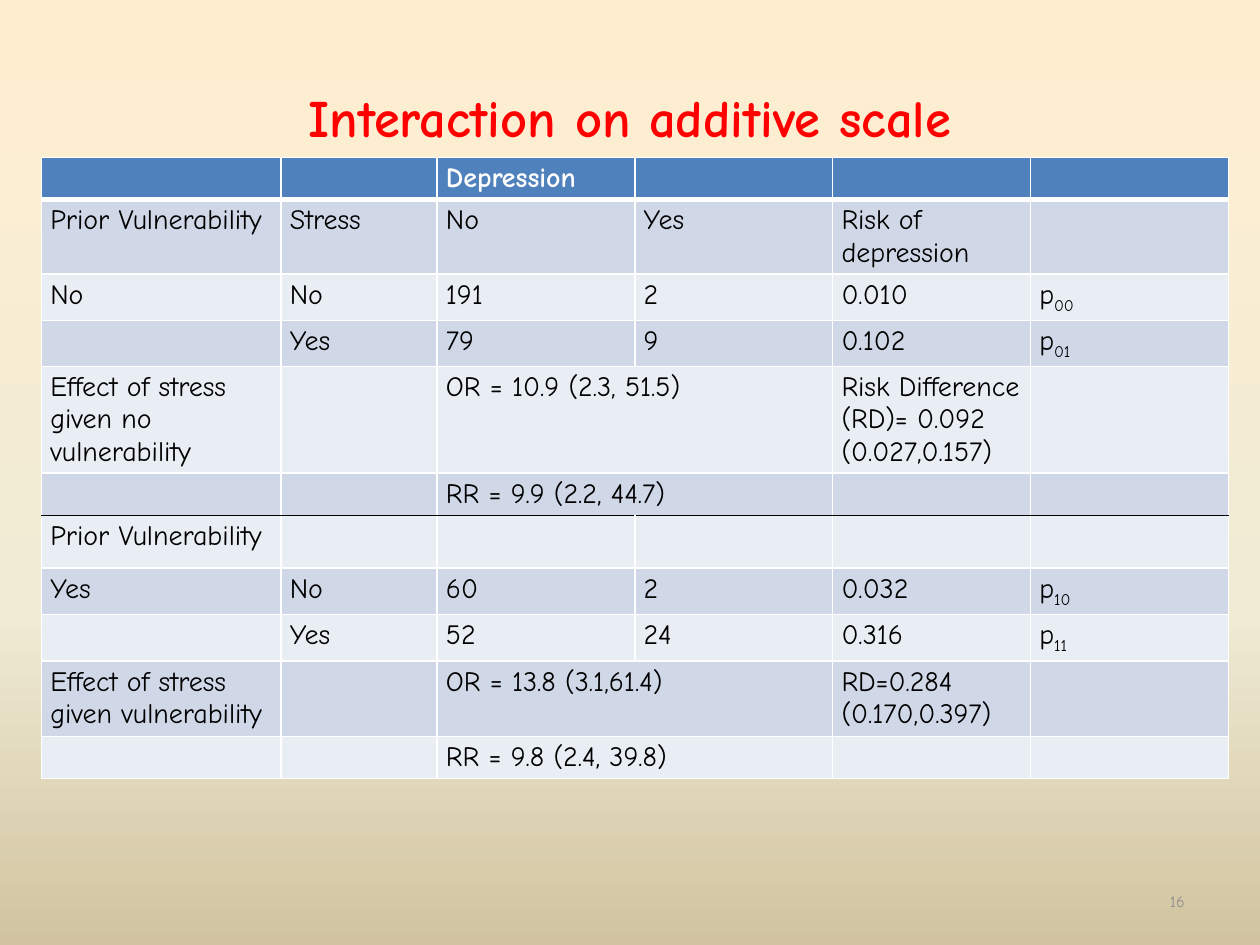
from copy import deepcopy

from lxml import etree
from pptx import Presentation
from pptx.dml.color import RGBColor
from pptx.enum.text import MSO_ANCHOR, PP_ALIGN
from pptx.oxml.ns import qn
from pptx.util import Inches, Pt

MIDDLE = MSO_ANCHOR.MIDDLE
CENTER, RIGHT = PP_ALIGN.CENTER, PP_ALIGN.RIGHT

FONT = "Comic Neue"
WHITE = RGBColor(0xFF, 0xFF, 0xFF)
BLACK = RGBColor(0x00, 0x00, 0x00)
RED = RGBColor(0xFF, 0x00, 0x00)
GRAY = RGBColor(0x8C, 0x8C, 0x8C)
HEADER_BLUE = RGBColor(0x4F, 0x81, 0xBD)
BAND_DARK = RGBColor(0xD0, 0xD8, 0xE8)
BAND_LIGHT = RGBColor(0xE9, 0xED, 0xF4)
BACKGROUND = [
    (0, RGBColor(0xFF, 0xEF, 0xD1)),
    (0.65, RGBColor(0xF0, 0xEB, 0xD5)),
    (1, RGBColor(0xD1, 0xC3, 0x9F)),
]

COLUMN_WIDTHS = [1.9, 1.24] + [1.57] * 4
ROW_HEIGHTS = [0.3, 0.42, 0.3, 0.3, 0.78, 0.25, 0.42, 0.25, 0.25, 0.6, 0.25]
# An underscore starts a subscript; None continues the cell to its left.
ROWS = [
    ["", "", "Depression", "", "", ""],
    ["Prior Vulnerability", "Stress", "No", "Yes", "Risk of depression", ""],
    ["No", "No", "191", "2", "0.010", "p_00"],
    ["", "Yes", "79", "9", "0.102", "p_01"],
    ["Effect of stress given no vulnerability", "", "OR = 10.9 (2.3, 51.5)", None,
     "Risk Difference (RD)= 0.092 (0.027,0.157)", ""],
    ["", "", "RR = 9.9 (2.2, 44.7)", None, "", ""],
    ["Prior Vulnerability", "", "", "", "", ""],
    ["Yes", "No", "60", "2", "0.032", "p_10"],
    ["", "Yes", "52", "24", "0.316", "p_11"],
    ["Effect of stress given vulnerability", "", "OR = 13.8 (3.1,61.4)", None,
     "RD=0.284 (0.170,0.397)", ""],
    ["", "", "RR = 9.8 (2.4, 39.8)", None, "", ""],
]
GROUP_END = 5  # last row of the first vulnerability group


def write(para, text, size, color, bold=False, align=None):
    """Fill a paragraph; text after an underscore becomes a subscript."""
    para.alignment = align
    for index, part in enumerate(text.split("_")):
        if not part:
            continue
        span = para.add_run()
        span.text = part
        span.font.name = FONT
        span.font.size = Pt(size)
        span.font.bold = bold
        span.font.color.rgb = color
        if index:
            span.font._element.set("baseline", "-25000")
    if not text:
        # Sized end mark, so that empty cells do not stretch their row
        end = etree.SubElement(para._p, qn("a:endParaRPr"), sz=str(size * 100))
        etree.SubElement(end, qn("a:latin"), typeface=FONT)


def set_border(cell, side, color, width):
    line = etree.SubElement(cell._tc.get_or_add_tcPr(), qn(f"a:ln{side}"), w=str(Pt(width)))
    fill = etree.SubElement(line, qn("a:solidFill"))
    etree.SubElement(fill, qn("a:srgbClr"), val=str(color))


deck = Presentation()
deck.slide_width, deck.slide_height = Inches(10), Inches(7.5)
page = deck.slides.add_slide(deck.slide_layouts[6])

# Background gradient, running downwards
background = page.background.fill
background.gradient()
background.gradient_angle = 270
stop_list = page._element.find(".//" + qn("a:gsLst"))
stop_list.append(deepcopy(stop_list[0]))
for stop, (position, color) in zip(background.gradient_stops, BACKGROUND):
    stop.position = position
    stop.color.rgb = color

# Table
table = page.shapes.add_table(
    len(ROWS), len(COLUMN_WIDTHS), Inches(0.33), Inches(1.25), Inches(9.42), Inches(4.12)
).table
for column, width in zip(table.columns, COLUMN_WIDTHS):
    column.width = Inches(width)
for row, height in zip(table.rows, ROW_HEIGHTS):
    row.height = Inches(height)

for r, texts in enumerate(ROWS):
    header = r == 0
    row_fill = HEADER_BLUE if header else BAND_DARK if r % 2 else BAND_LIGHT
    top = (BLACK, 1) if r == GROUP_END + 1 else (WHITE, 3 if r == 1 else 1)
    bottom = (BLACK, 1) if r == GROUP_END else (WHITE, 3 if header else 1)
    for c, text in enumerate(texts):
        cell = table.cell(r, c)
        cell.margin_left = cell.margin_right = Inches(0.07)
        cell.margin_top = cell.margin_bottom = Inches(0.04)
        for side, border in zip("LRTB", [(WHITE, 1), (WHITE, 1), top, bottom]):
            set_border(cell, side, *border)
        cell.fill.solid()
        cell.fill.fore_color.rgb = row_fill
        if text is None:
            table.cell(r, c - 1).merge(cell)
        write(cell.text_frame.paragraphs[0], text or "", 16,
              WHITE if header else BLACK, bold=header)

# Page number and title
for place, text, style in [
    ((7.17, 6.95, 2.33, 0.4), "16", dict(size=9, color=GRAY, align=RIGHT)),
    ((0.5, 0.3, 9, 1.25), "Interaction on additive scale",
     dict(size=30, color=RED, bold=True, align=CENTER)),
]:
    frame = page.shapes.add_textbox(*map(Inches, place)).text_frame
    frame.word_wrap = True
    frame.vertical_anchor = MIDDLE
    write(frame.paragraphs[0], text, **style)

deck.save("out.pptx")
